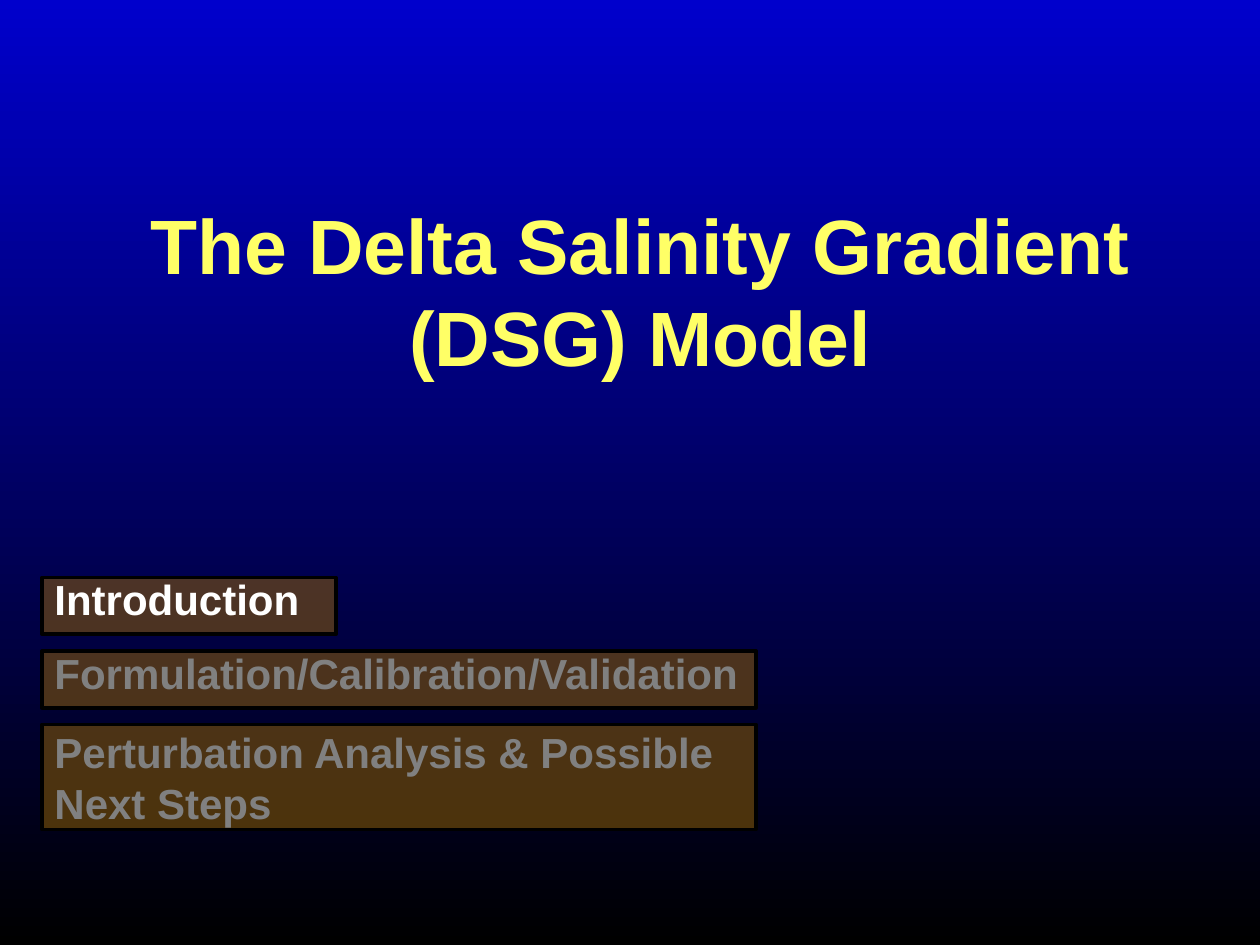
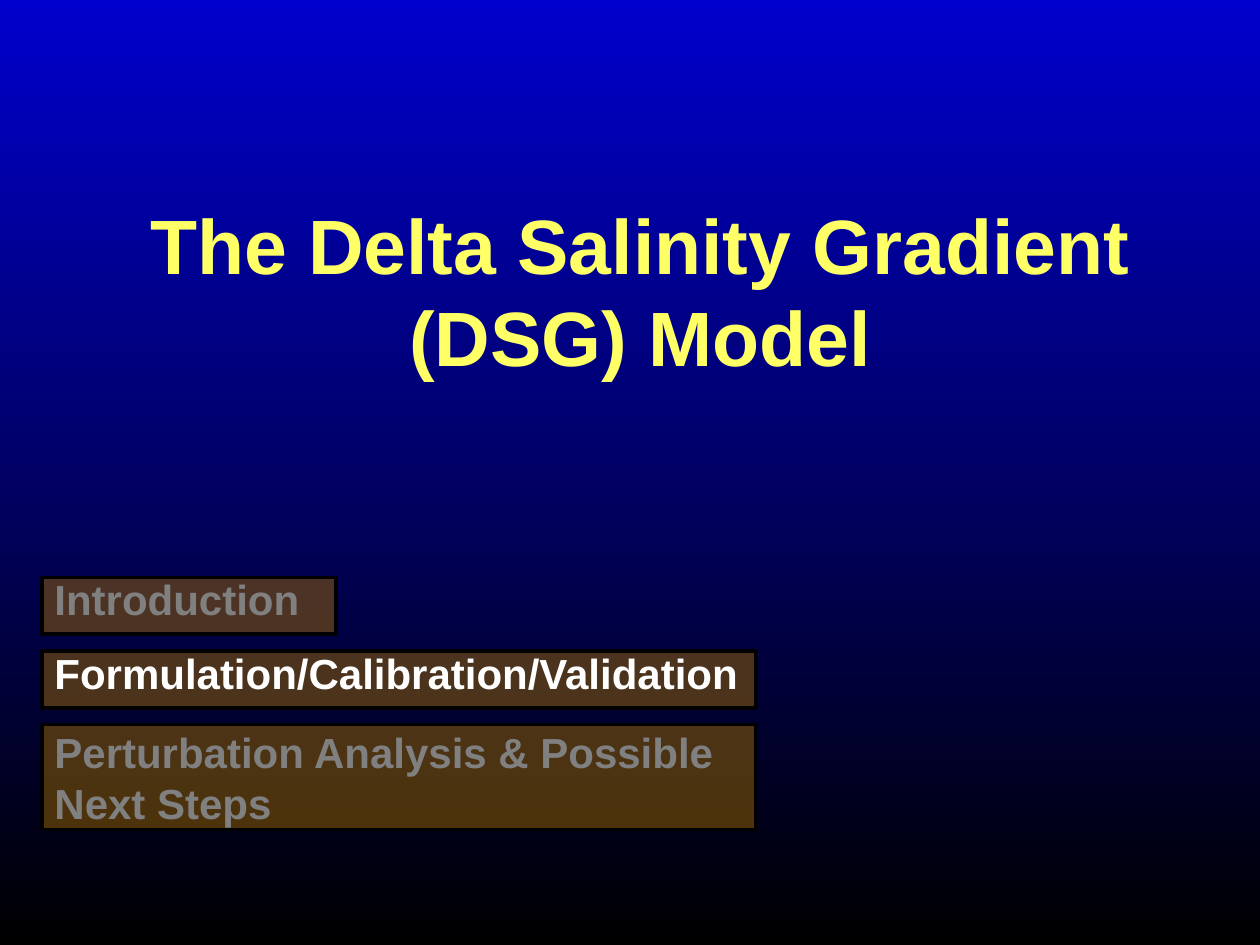
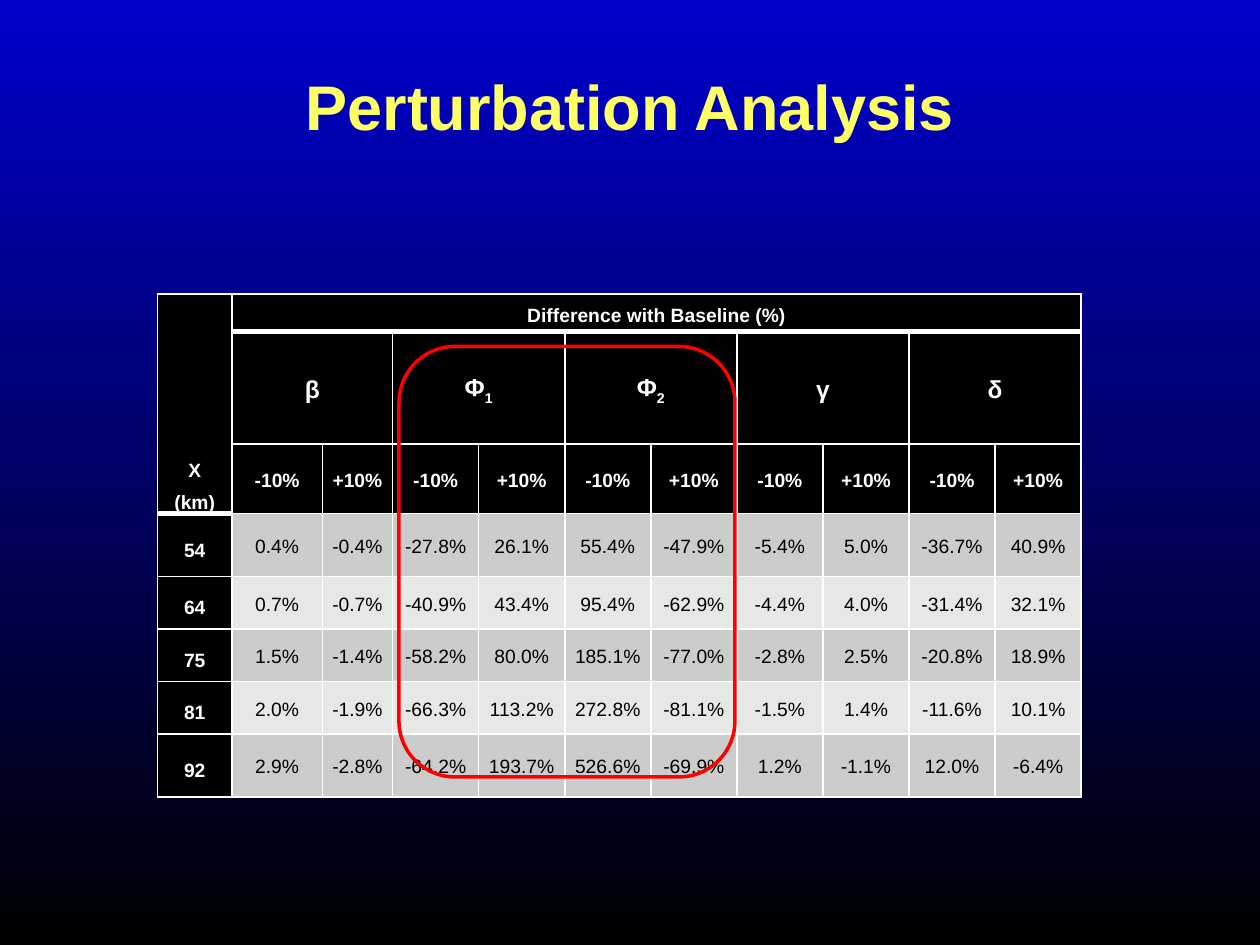
from lxml.etree import SubElement
from pptx import Presentation
from pptx.dml.color import RGBColor
from pptx.enum.shapes import MSO_SHAPE
from pptx.enum.text import MSO_ANCHOR, PP_ALIGN
from pptx.oxml.ns import qn
from pptx.util import Inches, Pt

# Shared style
FONT = "Arial"
BLACK, WHITE, GRAY = "000000", "FFFFFF", "808080"
BLUE, YELLOW, BROWN, RED = "0000CC", "FFFF66", "996600", "FF0000"
BANDS = ["CCCCCC", "E7E7E7"]
BLANK_LAYOUT = 6

# Agenda entries: text, top row, width, height, paragraph format
ONE_LINE = {"line_spacing": 0.65}
AGENDA = [
    ("Introduction", 55, 28, 5.4, ONE_LINE),
    ("Formulation/Calibration/Validation", 62, 68, 5.4, ONE_LINE),
    ("Perturbation Analysis & Possible Next Steps", 69, 68, 10, {}),
]

# Perturbation results
PARAMETERS = [("β", ""), ("Φ", "1"), ("Φ", "2"), ("γ", ""), ("δ", "")]
CHANGES = ["-10%", "+10%"]
RESULTS = {
    54: [0.4, -0.4, -27.8, 26.1, 55.4, -47.9, -5.4, 5.0, -36.7, 40.9],
    64: [0.7, -0.7, -40.9, 43.4, 95.4, -62.9, -4.4, 4.0, -31.4, 32.1],
    75: [1.5, -1.4, -58.2, 80.0, 185.1, -77.0, -2.8, 2.5, -20.8, 18.9],
    81: [2.0, -1.9, -66.3, 113.2, 272.8, -81.1, -1.5, 1.4, -11.6, 10.1],
    92: [2.9, -2.8, -64.2, 193.7, 526.6, -69.9, 1.2, -1.1, 12.0, -6.4],
}
COLUMN_WIDTHS = [7.1, 8.6, 6.7] + [8.2] * 8
ROW_HEIGHTS = [3.6, 10.7, 5.3, 6, 5, 5, 5, 6]
HEADER_ROWS = 3
LABEL_FORMAT = {"line_spacing": 1.5, "space_after": Pt(12)}
VALUE_FORMAT = {"line_spacing": 1.15}


def color(hex_string):
    return RGBColor.from_string(hex_string)


def grid(*units):
    """Turn grid units, twelve to the inch, into lengths."""
    return [Inches(unit / 12) for unit in units]


def set_attributes(target, values):
    for name, value in values.items():
        setattr(target, name, value)


def is_thick_below(row, column):
    return (row == 0 and column > 0) or (row == HEADER_ROWS - 1 and column == 0)


class Deck:
    def __init__(self):
        self.presentation = Presentation()
        width, height = grid(120, 90)
        set_attributes(self.presentation, {"slide_width": width, "slide_height": height})
        self.slide = None
        # Gradient from blue at the top to black
        fill = self.presentation.slide_master.background.fill
        fill.gradient()
        fill.gradient_angle = 270
        for stop, position, shade in zip(fill.gradient_stops, (0, 1), (BLUE, BLACK)):
            stop.position = position
            stop.color.rgb = color(shade)

    def add_slide(self):
        layout = self.presentation.slide_layouts[BLANK_LAYOUT]
        self.slide = self.presentation.slides.add_slide(layout)

    def add_text(self, frame, text, size, shade, bold=True, subscript="", **formats):
        paragraph = frame.paragraphs[0]
        set_attributes(paragraph, formats)
        for part in filter(None, (text, subscript)):
            run = paragraph.add_run()
            run.text = part
            set_attributes(run.font, {"name": FONT, "size": Pt(size), "bold": bold})
            run.font.color.rgb = color(shade)
        if subscript:
            run.font._element.set("baseline", "-25000")
        return paragraph

    def add_title(self, text, box, size):
        frame = self.slide.shapes.add_textbox(*grid(*box)).text_frame
        set_attributes(frame, {"word_wrap": True, "vertical_anchor": MSO_ANCHOR.BOTTOM})
        paragraph = self.add_text(frame, text, size, YELLOW, alignment=PP_ALIGN.CENTER)
        # Black text shadow, placed right after the text fill
        properties = paragraph.runs[0].font._element
        effects = SubElement(properties, qn("a:effectLst"))
        properties.find(qn("a:solidFill")).addnext(effects)
        shadow = SubElement(effects, qn("a:outerShdw"), dist="38100", dir="2700000")
        SubElement(shadow, qn("a:srgbClr"), val=BLACK)

    def add_box(self, preset, box, line, line_width, fill=None):
        shape = self.slide.shapes.add_shape(preset, *grid(*box))
        shape.shadow.inherit = False
        shape.line.color.rgb = color(line)
        shape.line.width = Pt(line_width)
        if fill:
            shape.fill.solid()
            shape.fill.fore_color.rgb = color(fill)
            tint = shape._element.spPr.find(qn("a:solidFill"))[0]
            SubElement(tint, qn("a:alpha"), val="50000")
        else:
            shape.fill.background()
        return shape

    def add_agenda(self, current):
        for index, (text, top, width, height, formats) in enumerate(AGENDA):
            shape = self.add_box(MSO_SHAPE.RECTANGLE, (4, top, width, height), BLACK, 2.25, BROWN)
            frame = shape.text_frame
            set_attributes(frame, {"word_wrap": True, "vertical_anchor": MSO_ANCHOR.MIDDLE})
            self.add_text(frame, text, 24, WHITE if index == current else GRAY,
                          alignment=PP_ALIGN.LEFT, space_before=Pt(4.8),
                          space_after=Pt(7.2), **formats)

    def add_table(self, left, top):
        box = grid(left, top, sum(COLUMN_WIDTHS), sum(ROW_HEIGHTS))
        table = self.slide.shapes.add_table(len(ROW_HEIGHTS), len(COLUMN_WIDTHS), *box).table
        set_attributes(table, {"first_row": False, "horz_banding": False})
        for column, width in zip(table.columns, grid(*COLUMN_WIDTHS)):
            column.width = width
        for row, height in zip(table.rows, grid(*ROW_HEIGHTS)):
            row.height = height
        for row in range(len(ROW_HEIGHTS)):
            for column in range(len(COLUMN_WIDTHS)):
                self.style_cell(table.cell(row, column), row, column)
        return table

    def style_cell(self, cell, row, column):
        margin = Inches(0.07)
        set_attributes(cell, {"margin_left": margin, "margin_right": margin,
                              "margin_top": 0, "margin_bottom": 0,
                              "vertical_anchor": MSO_ANCHOR.MIDDLE})
        # Borders come before the fill in the cell properties
        widths = {"lnL": 1, "lnR": 1,
                  "lnT": 3 if is_thick_below(row - 1, column) else 1,
                  "lnB": 3 if is_thick_below(row, column) or row == column == 0 else 1}
        for side, width in widths.items():
            border = SubElement(cell._tc.get_or_add_tcPr(), qn(f"a:{side}"), w=str(int(Pt(width))))
            fill = SubElement(border, qn("a:solidFill"))
            SubElement(fill, qn("a:srgbClr"), val=WHITE)
        is_header = row < HEADER_ROWS or column == 0
        cell.fill.solid()
        cell.fill.fore_color.rgb = color(BLACK if is_header else BANDS[(row - HEADER_ROWS) % 2])

    def add_cell_text(self, cell, text, formats, size=11, shade=WHITE, **options):
        self.add_text(cell.text_frame, text, size, shade,
                      alignment=PP_ALIGN.CENTER, **formats, **options)

    def add_results(self, left, top):
        table = self.add_table(left, top)
        # Header rows
        corner = table.cell(0, 0)
        corner.merge(table.cell(HEADER_ROWS - 1, 0))
        corner.vertical_anchor = MSO_ANCHOR.BOTTOM
        self.add_cell_text(corner, "X (km)", LABEL_FORMAT)
        heading = table.cell(0, 1)
        heading.merge(table.cell(0, len(COLUMN_WIDTHS) - 1))
        heading.vertical_anchor = MSO_ANCHOR.TOP
        self.add_cell_text(heading, "Difference with Baseline (%)", LABEL_FORMAT)
        for index, (symbol, subscript) in enumerate(PARAMETERS):
            first = 1 + index * len(CHANGES)
            table.cell(1, first).merge(table.cell(1, first + 1))
            self.add_cell_text(table.cell(1, first), symbol, VALUE_FORMAT, 14,
                               subscript=subscript)
            for column, change in enumerate(CHANGES, first):
                self.add_cell_text(table.cell(2, column), change, VALUE_FORMAT)
        # One row per distance
        for row, (distance, values) in enumerate(RESULTS.items(), HEADER_ROWS):
            self.add_cell_text(table.cell(row, 0), str(distance), LABEL_FORMAT)
            for column, value in enumerate(values, 1):
                self.add_cell_text(table.cell(row, column), f"{value:.1f}%", VALUE_FORMAT,
                                   shade=BLACK, bold=False)


def main():
    deck = Deck()

    # Section slides
    for current in (0, 1):
        deck.add_slide()
        deck.add_agenda(current)
        deck.add_title("The Delta Salinity Gradient (DSG) Model", (12, 19, 98, 18), 44)

    # Perturbation table with the Φ columns ringed
    deck.add_slide()
    deck.add_title("Perturbation Analysis", (0, 2.2, 120, 12), 36)
    deck.add_results(15, 28)
    deck.add_box(MSO_SHAPE.ROUNDED_RECTANGLE, (38, 33, 32, 41), RED, 2)

    deck.presentation.save("out.pptx")


if __name__ == "__main__":
    main()
